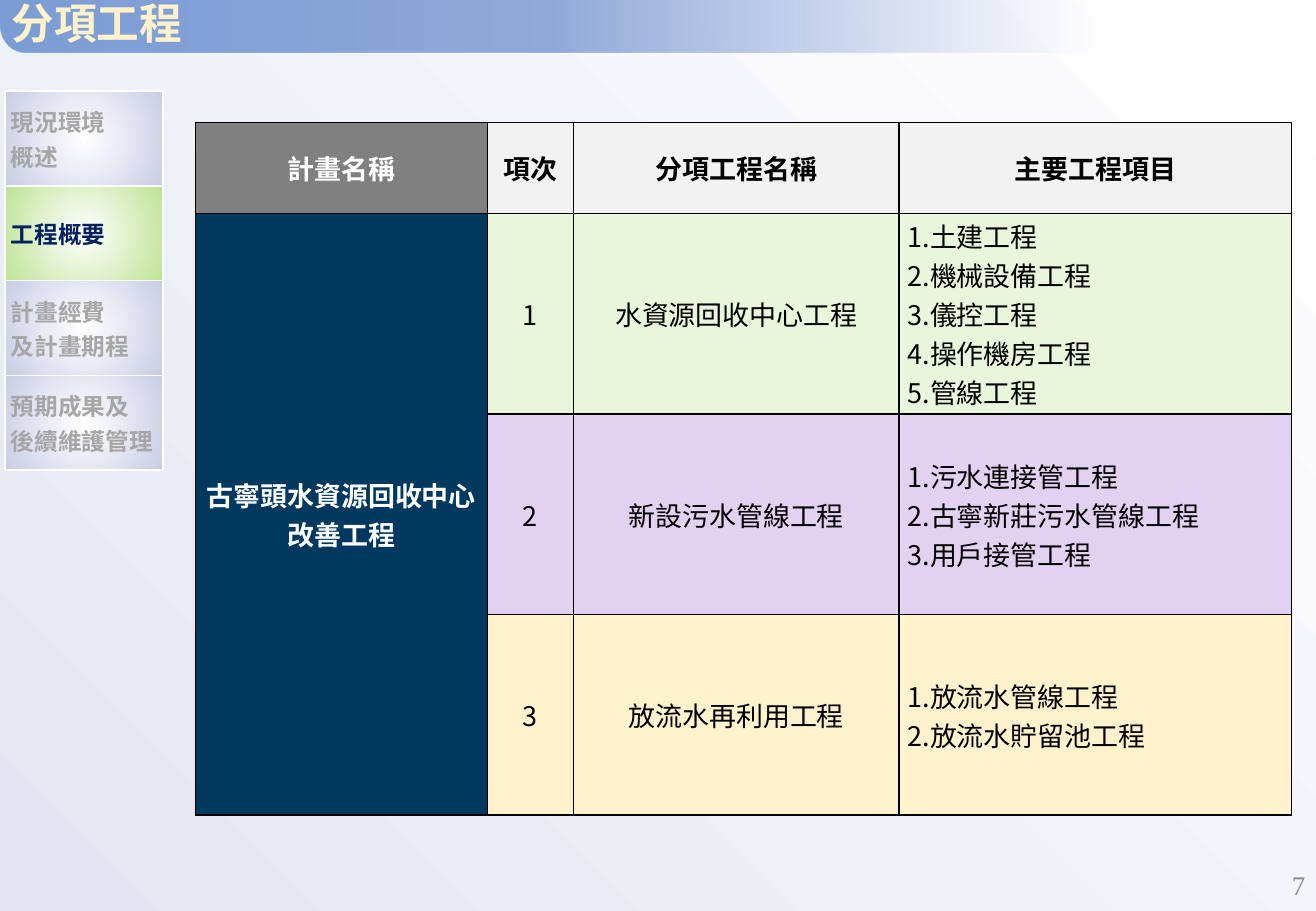
from lxml import etree
from pptx import Presentation
from pptx.dml.color import RGBColor
from pptx.enum.shapes import MSO_SHAPE
from pptx.enum.text import MSO_ANCHOR, PP_ALIGN
from pptx.oxml import parse_xml
from pptx.oxml.ns import nsdecls, qn
from pptx.util import Inches, Pt

SANS = "Noto Sans CJK SC"
SERIF = "Times New Roman"

WHITE = RGBColor(0xFF, 0xFF, 0xFF)
BLACK = RGBColor(0x00, 0x00, 0x00)
MIST = RGBColor(0xE3, 0xE6, 0xF2)
CREAM = RGBColor(0xFF, 0xF2, 0xCC)
BAND_LIGHT = RGBColor(0x9D, 0xB5, 0xE3)
BAND_MIDDLE = RGBColor(0x90, 0xAA, 0xDA)
BAND_DARK = RGBColor(0x7C, 0x9D, 0xD5)
LAVENDER = RGBColor(0xC8, 0xCD, 0xE5)
LEAF = RGBColor(0xBE, 0xE3, 0x96)
MUTED = RGBColor(0xA6, 0xA6, 0xA6)
NAVY = RGBColor(0x00, 0x20, 0x60)
PAGE_GRAY = RGBColor(0x8C, 0x8C, 0x8C)
HEAD_DARK = RGBColor(0x80, 0x80, 0x80)
HEAD_LIGHT = RGBColor(0xF2, 0xF2, 0xF2)
PLAN_BLUE = RGBColor(0x00, 0x38, 0x60)
GREEN = RGBColor(0xE9, 0xF6, 0xDC)
PURPLE = RGBColor(0xE3, 0xD1, 0xF1)

CHAPTERS = [
    ["現況環境", "概述"],
    ["工程概要"],
    ["計畫經費", "及計畫期程"],
    ["預期成果及", "後續維護管理"],
]
CURRENT_CHAPTER = 1

HEADINGS = ["計畫名稱", "項次", "分項工程名稱", "主要工程項目"]
PLAN = "古寧頭水資源回收中心改善工程"
WORKS = [
    ("水資源回收中心工程", GREEN,
     ["土建工程", "機械設備工程", "儀控工程", "操作機房工程", "管線工程"]),
    ("新設污水管線工程", PURPLE,
     ["污水連接管工程", "古寧新莊污水管線工程", "用戶接管工程"]),
    ("放流水再利用工程", CREAM, ["放流水管線工程", "放流水貯留池工程"]),
]


def paint_gradient(fill, holder, stops, angle=None):
    """Fill with (percent, colour, alpha percent) stops; without an angle it spreads from the centre."""
    fill.solid()
    gradient = parse_xml(f'<a:gradFill {nsdecls("a")} rotWithShape="1"><a:gsLst/></a:gradFill>')
    for percent, color, alpha in stops:
        stop = etree.SubElement(gradient[0], qn("a:gs"), pos=str(percent * 1000))
        tone = etree.SubElement(stop, qn("a:srgbClr"), val=str(color))
        if alpha < 100:
            etree.SubElement(tone, qn("a:alpha"), val=str(alpha * 1000))
    if angle is None:
        spread = etree.SubElement(gradient, qn("a:path"), {"path": "circle"})
        sides = dict.fromkeys("ltrb", "50000")
        etree.SubElement(spread, qn("a:fillToRect"), sides)
    else:
        etree.SubElement(gradient, qn("a:lin"), ang=str(angle * 60000), scaled="0")
    solid = holder.find(qn("a:solidFill"))
    holder.replace(solid, gradient)


def write(frame, lines, size, color, align, bold=False, font=SANS, spacing=None):
    for index, line in enumerate(lines):
        para = frame.paragraphs[0] if index == 0 else frame.add_paragraph()
        para.alignment = align
        para.line_spacing = spacing
        span = para.add_run()
        span.text = line
        for name, value in {"size": Pt(size), "bold": bold, "name": font}.items():
            setattr(span.font, name, value)
        span.font.color.rgb = color
        etree.SubElement(span.font._element, qn("a:ea"), typeface=font)


def add_label(page, place, text, **style):
    box = page.shapes.add_textbox(*map(Inches, place))
    frame = box.text_frame
    frame.word_wrap = True
    frame.vertical_anchor = MSO_ANCHOR.MIDDLE
    write(frame, [text], **style)


def add_grid(page, left, top, columns, rows):
    frame = page.shapes.add_table(len(rows), len(columns), Inches(left), Inches(top),
                                  Inches(sum(columns)), Inches(sum(rows)))
    table = frame.table
    table.first_row = table.horz_banding = False
    for column, width in zip(table.columns, columns):
        column.width = Inches(width)
    for row, height in zip(table.rows, rows):
        row.height = Inches(height)
    return table


def frame_cell(cell, color, margin_x, margin_y):
    """Set margins, middle anchor and a one-point border on all four sides."""
    cell.vertical_anchor = MSO_ANCHOR.MIDDLE
    cell.margin_left = cell.margin_right = Inches(margin_x)
    cell.margin_top = cell.margin_bottom = Inches(margin_y)
    properties = cell._tc.get_or_add_tcPr()
    for side in ("lnL", "lnR", "lnT", "lnB"):
        properties.append(parse_xml(
            f'<a:{side} {nsdecls("a")} w="12700"><a:solidFill>'
            f'<a:srgbClr val="{color}"/></a:solidFill></a:{side}>'))


def add_title_band(page):
    band = page.shapes.add_shape(MSO_SHAPE.ROUND_2_DIAG_RECTANGLE, 0, 0,
                                 Inches(8.98), Inches(0.43))
    band.shadow.inherit = False
    band.adjustments[0], band.adjustments[1] = 0, 0.5
    band.line.fill.background()
    stops = [(0, BAND_LIGHT, 0), (50, BAND_MIDDLE, 100), (100, BAND_DARK, 100)]
    paint_gradient(band.fill, band._element.spPr, stops, 180)
    add_label(page, (0, 0, 9.34, 0.43), "分項工程", size=25.2, color=CREAM,
              align=PP_ALIGN.LEFT, bold=True, spacing=0.9)


def add_chapter_menu(page):
    table = add_grid(page, 0.04, 0.75, [1.3], [0.78] * len(CHAPTERS))
    for index, lines in enumerate(CHAPTERS):
        cell = table.cell(index, 0)
        edge, ink = (LEAF, NAVY) if index == CURRENT_CHAPTER else (LAVENDER, MUTED)
        frame_cell(cell, WHITE, 0.05, 0.05)
        paint_gradient(cell.fill, cell._tc.tcPr, [(0, WHITE, 100), (100, edge, 100)])
        write(cell.text_frame, lines, 14, ink, PP_ALIGN.JUSTIFY, bold=True)


def fill_work_cell(cell, lines, back, color=BLACK, align=PP_ALIGN.CENTER, bold=False):
    cell.fill.solid()
    cell.fill.fore_color.rgb = back
    write(cell.text_frame, lines, 16, color, align, bold)


def add_work_table(page):
    table = add_grid(page, 1.61, 1.01, [2.4, 0.71, 2.68, 3.23],
                     [0.75] + [1.65] * len(WORKS))
    for cell in table.iter_cells():
        frame_cell(cell, BLACK, 0.07, 0)
    for column, heading in enumerate(HEADINGS):
        back, ink = (HEAD_LIGHT, BLACK) if column else (HEAD_DARK, WHITE)
        fill_work_cell(table.cell(0, column), [heading], back, ink, bold=True)

    plan = table.cell(1, 0)
    plan.merge(table.cell(len(WORKS), 0))
    fill_work_cell(plan, [PLAN], PLAN_BLUE, WHITE, bold=True)

    for row, (name, back, items) in enumerate(WORKS, 1):
        numbered = [f"{number}.{item}" for number, item in enumerate(items, 1)]
        fill_work_cell(table.cell(row, 1), [str(row)], back)
        fill_work_cell(table.cell(row, 2), [name], back)
        fill_work_cell(table.cell(row, 3), numbered, back, align=PP_ALIGN.LEFT)


def main():
    deck = Presentation()
    deck.slide_width, deck.slide_height = Inches(10.83), Inches(7.5)
    page = deck.slides.add_slide(deck.slide_layouts[6])
    backdrop = page.background.fill
    backdrop.solid()
    paint_gradient(backdrop, page._element.cSld.bg.bgPr,
                   [(0, WHITE, 100), (100, MIST, 100)], 135)
    add_title_band(page)
    add_label(page, (8.4, 7.08, 2.44, 0.4), "7", size=16, color=PAGE_GRAY,
              align=PP_ALIGN.RIGHT, font=SERIF)
    add_chapter_menu(page)
    add_work_table(page)
    deck.save("out.pptx")


if __name__ == "__main__":
    main()
